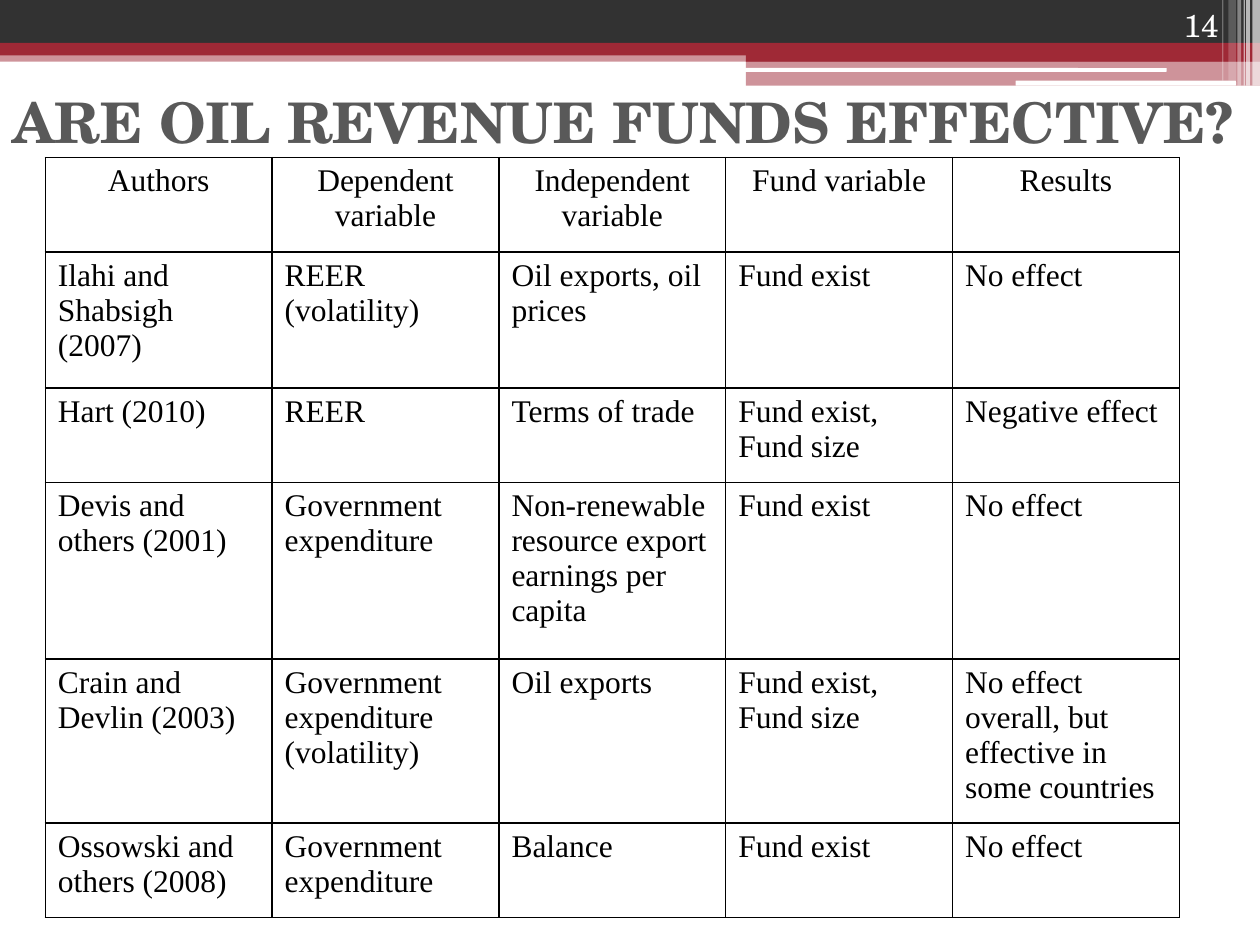
"""Build a slide that tables studies of oil revenue funds."""
from dataclasses import dataclass
from typing import Any

from lxml.etree import SubElement as Sub
from pptx import Presentation as Deck
from pptx.dml.color import RGBColor as Rgb
from pptx.enum.shapes import MSO_SHAPE as Kind
from pptx.enum.text import MSO_ANCHOR as Anchor, PP_ALIGN as Align
from pptx.oxml import parse_xml
from pptx.oxml.ns import qn
from pptx.util import Inches, Pt


@dataclass(frozen=True)
class Theme:
    red: str = "9F2936"
    dark: str = "323232"
    white: str = "FFFFFF"
    grey: str = "595959"
    black: str = "000000"
    serif: str = "TeX Gyre Schola"
    body: str = "Times New Roman"
    big: int = 32
    small: int = 18


@dataclass(frozen=True)
class Bar:
    left: float
    top: float
    width: float
    height: float
    color: str
    alpha: int = 100
    kind: Any = Kind.RECTANGLE


@dataclass(frozen=True)
class Label:
    left: float
    top: float
    width: float
    height: float
    text: str
    size: int
    color: str
    anchor: Any
    align: Any
    bold: bool = False


LOOK = Theme()
ROUND = Kind.ROUNDED_RECTANGLE
BARS = [
    Bar(0, 0.4, 10, 0.09, LOOK.red, 50),
    Bar(0, 0, 10, 0.34, LOOK.dark),
    Bar(0, 0.34, 10, 0.1, LOOK.red),
    Bar(5.92, 0.39, 4.08, 0.1, LOOK.red),
    Bar(5.92, 0.48, 4.08, 0.2, LOOK.red, 50),
    Bar(5.91, 0.54, 3.35, 0.03, LOOK.white, kind=ROUND),
    Bar(8.06, 0.64, 1.75, 0.04, LOOK.white, kind=ROUND),
    Bar(9.94, 0, 0.06, 0.68, LOOK.white, 65),
    Bar(9.89, 0, 0.03, 0.68, LOOK.white, 65),
    Bar(9.87, 0, 0.01, 0.68, LOOK.white, 60),
    Bar(9.82, 0, 0.03, 0.68, LOOK.white, 40),
    Bar(9.75, 0, 0.06, 0.64, LOOK.white, 20),
    Bar(9.7, 0, 0.01, 0.64, LOOK.white, 30),
]
LABELS = [
    Label(0, 0.68, 10, 0.57, "ARE OIL REVENUE FUNDS EFFECTIVE?", LOOK.big,
          LOOK.grey, Anchor.MIDDLE, Align.LEFT, True),
    Label(8.94, 0, 0.83, 0.4, "14", LOOK.small, LOOK.white,
          Anchor.BOTTOM, Align.RIGHT),
]
HIGHS = [0.75, 1.08, 0.75, 1.4, 1.08, 0.75]
WIDE = 1.8
ROWS = [
    ["Authors", "Dependent variable", "Independent variable",
     "Fund variable", "Results"],
    ["Ilahi and Shabsigh (2007)", "REER (volatility)",
     "Oil exports, oil prices", "Fund exist", "No effect"],
    ["Hart (2010)", "REER", "Terms of trade", "Fund exist, Fund size",
     "Negative effect"],
    ["Devis and others (2001)", "Government expenditure",
     "Non-renewable resource export earnings per capita",
     "Fund exist", "No effect"],
    ["Crain and Devlin (2003)", "Government expenditure (volatility)",
     "Oil exports", "Fund exist, Fund size",
     "No effect overall, but effective in some countries"],
    ["Ossowski and others (2008)", "Government expenditure", "Balance",
     "Fund exist", "No effect"],
]


def draw_bar(slide: Any, bar: Bar) -> None:
    shape = slide.shapes.add_shape(
        bar.kind, Inches(bar.left), Inches(bar.top),
        Inches(bar.width), Inches(bar.height))
    shape.shadow.inherit = False
    shape.line.fill.background()
    shape.fill.solid()
    shape.fill.fore_color.rgb = Rgb.from_string(bar.color)
    if bar.alpha < 100:
        tint = shape.fill._xPr.find(f".//{qn('a:srgbClr')}")
        Sub(tint, qn("a:alpha"), val=str(bar.alpha * 1000))


def add_run(para: Any, text: str, font: str, size: int, color: str,
            bold: bool = False) -> None:
    run = para.add_run()
    run.text = text
    run.font.name = font
    run.font.size = Pt(size)
    run.font.bold = bold
    run.font.color.rgb = Rgb.from_string(color)


def draw_label(slide: Any, label: Label) -> None:
    box = slide.shapes.add_textbox(
        Inches(label.left), Inches(label.top),
        Inches(label.width), Inches(label.height))
    frame = box.text_frame
    frame.word_wrap = True
    frame.vertical_anchor = label.anchor
    para = frame.paragraphs[0]
    para.alignment = label.align
    add_run(para, label.text, LOOK.serif, label.size, label.color, label.bold)


def edge_cell(cell: Any) -> None:
    props = cell._tc.get_or_add_tcPr()
    space = "http://schemas.openxmlformats.org/drawingml/2006/main"
    for spot, side in enumerate(("lnL", "lnR", "lnT", "lnB")):
        props.insert(spot, parse_xml(
            f'<a:{side} xmlns:a="{space}" w="12700"><a:solidFill>'
            f'<a:srgbClr val="{LOOK.black}"/></a:solidFill></a:{side}>'))


def draw_table(slide: Any) -> None:
    cols = len(ROWS[0])
    table = slide.shapes.add_table(
        len(ROWS), cols, Inches(0.36), Inches(1.25),
        Inches(WIDE * cols), Inches(sum(HIGHS))).table
    table.first_row = table.horz_banding = False
    for col in table.columns:
        col.width = Inches(WIDE)
    for at, (high, texts) in enumerate(zip(HIGHS, ROWS)):
        table.rows[at].height = Inches(high)
        for cell, text in zip(table.rows[at].cells, texts):
            cell.fill.background()
            edge_cell(cell)
            para = cell.text_frame.paragraphs[0]
            para.alignment = Align.LEFT if at else Align.CENTER
            add_run(para, text, LOOK.body, LOOK.small, LOOK.black)


def main() -> None:
    deck = Deck()
    deck.slide_width, deck.slide_height = Inches(10), Inches(7.5)
    slide = deck.slides.add_slide(deck.slide_layouts[6])
    for bar in BARS:
        draw_bar(slide, bar)
    for label in LABELS:
        draw_label(slide, label)
    draw_table(slide)
    deck.save("out.pptx")


if __name__ == "__main__":
    main()
